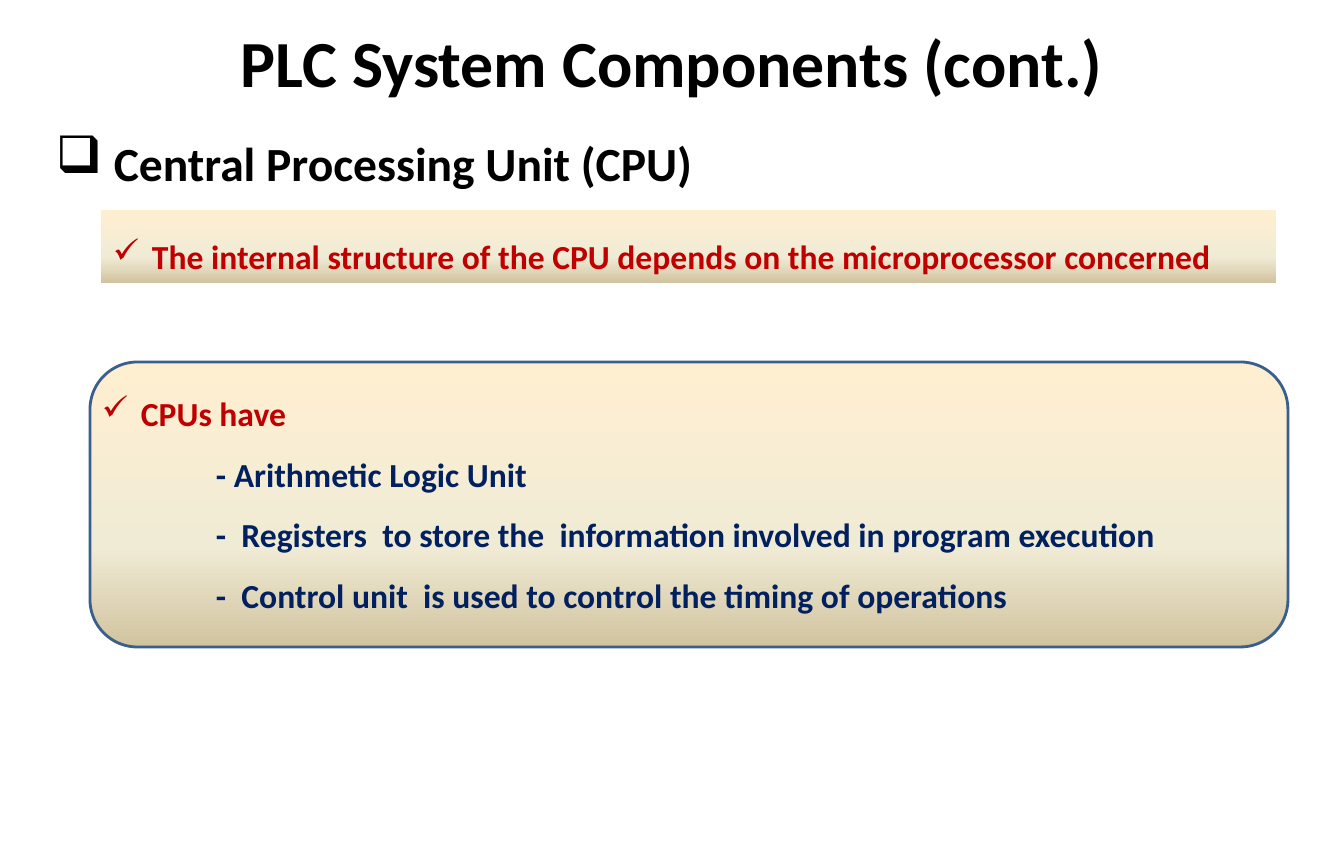
from dataclasses import dataclass

from lxml.etree import SubElement
from pptx import Presentation
from pptx.dml.color import RGBColor
from pptx.enum.shapes import MSO_SHAPE as Shape
from pptx.enum.text import MSO_ANCHOR as Anchor, MSO_AUTO_SIZE as AutoSize, PP_ALIGN as Align
from pptx.oxml.ns import qn
from pptx.util import Emu, Pt


@dataclass(frozen=True)
class Theme:
    font: str = "Calibri"
    black: str = "000000"
    red: str = "C00000"
    navy: str = "002060"
    outline: str = "3A5F8C"
    sand: tuple = ((0, "FFEFD1"), (65, "F0EBD5"), (100, "D1C39F"))
    title_size: int = 47
    lead_size: int = 37
    heading_size: int = 34
    body_size: int = 24


THEME = Theme()
EMU_PER_PX = 914400 / 100.8
CHECK_INDENT = 39
ITEM_INDENT = 114

CPU_PARTS = (
    "- Arithmetic Logic Unit",
    "-  Registers  to store the  information involved in program execution",
    "-  Control unit  is used to control the timing of operations",
)


def px(length):
    return Emu(round(length * EMU_PER_PX))


def set_frame(shape, anchor=Anchor.TOP, grow=False):
    frame = shape.text_frame
    frame.word_wrap = True
    frame.vertical_anchor = anchor
    frame.auto_size = AutoSize.SHAPE_TO_FIT_TEXT if grow else AutoSize.NONE
    frame.margin_left = frame.margin_right = px(12)
    frame.margin_top = frame.margin_bottom = px(6)
    return frame


def add_text_area(slide, box, **frame_options):
    return set_frame(slide.shapes.add_textbox(*map(px, box)), **frame_options)


def add_sand_panel(slide, kind, box, outline=None):
    panel = slide.shapes.add_shape(kind, *map(px, box))
    panel.shadow.inherit = False
    panel.fill.gradient()
    panel.fill.gradient_angle = 270
    # Three colour stops, top to bottom
    stops = panel.fill._xPr.find(qn("a:gradFill")).find(qn("a:gsLst"))
    stops.clear()
    for percent, color in THEME.sand:
        stop = SubElement(stops, qn("a:gs"), pos=str(percent * 1000))
        SubElement(stop, qn("a:srgbClr"), val=color)
    if outline:
        panel.line.color.rgb = RGBColor.from_string(outline)
        panel.line.width = Pt(2)
    else:
        panel.line.fill.background()
    return panel


def add_run(paragraph, text, size, color):
    run = paragraph.add_run()
    run.text = text
    run.font.name = THEME.font
    run.font.size = Pt(size)
    run.font.bold = True
    run.font.color.rgb = RGBColor.from_string(color)


def set_indent(paragraph, left, bullet=None):
    properties = paragraph._p.get_or_add_pPr()
    properties.set("marL", str(px(left)))
    if bullet:
        properties.set("indent", str(-px(left)))
        SubElement(properties, qn("a:buChar"), char=bullet)


def write_body_line(paragraph, text, color, left, bullet=None):
    paragraph.alignment = Align.LEFT
    paragraph.line_spacing = 1.5
    set_indent(paragraph, left, bullet)
    add_run(paragraph, text, THEME.body_size, color)


def main():
    presentation = Presentation()
    presentation.slide_width, presentation.slide_height = px(1344), px(857)
    slide = presentation.slides.add_slide(presentation.slide_layouts[6])

    # Panel behind the list of CPU parts
    add_sand_panel(slide, Shape.ROUNDED_RECTANGLE, (90, 362, 1198, 285), THEME.outline)

    # Title
    title = add_text_area(slide, (67, 9, 1210, 105), anchor=Anchor.MIDDLE).paragraphs[0]
    title.alignment = Align.CENTER
    add_run(title, "PLC System Components (cont.)", THEME.title_size, THEME.black)

    # Section heading
    heading = add_text_area(slide, (44, 124, 1210, 86)).paragraphs[0]
    heading.space_before = Pt(7)
    set_indent(heading, 44, "❑")
    add_run(heading, " ", THEME.lead_size, THEME.black)
    add_run(heading, "Central Processing Unit (CPU)", THEME.heading_size, THEME.black)

    # Structure statement
    statement = add_sand_panel(slide, Shape.RECTANGLE, (101, 210, 1175, 73))
    write_body_line(
        set_frame(statement, grow=True).paragraphs[0],
        "The internal structure of the CPU depends on the microprocessor concerned",
        THEME.red, CHECK_INDENT, "✓",
    )

    # CPU parts
    parts = add_text_area(slide, (90, 367, 1198, 255), grow=True)
    write_body_line(parts.paragraphs[0], "CPUs have", THEME.red, CHECK_INDENT, "✓")
    for part in CPU_PARTS:
        write_body_line(parts.add_paragraph(), part, THEME.navy, ITEM_INDENT)

    presentation.save("out.pptx")


if __name__ == "__main__":
    main()
